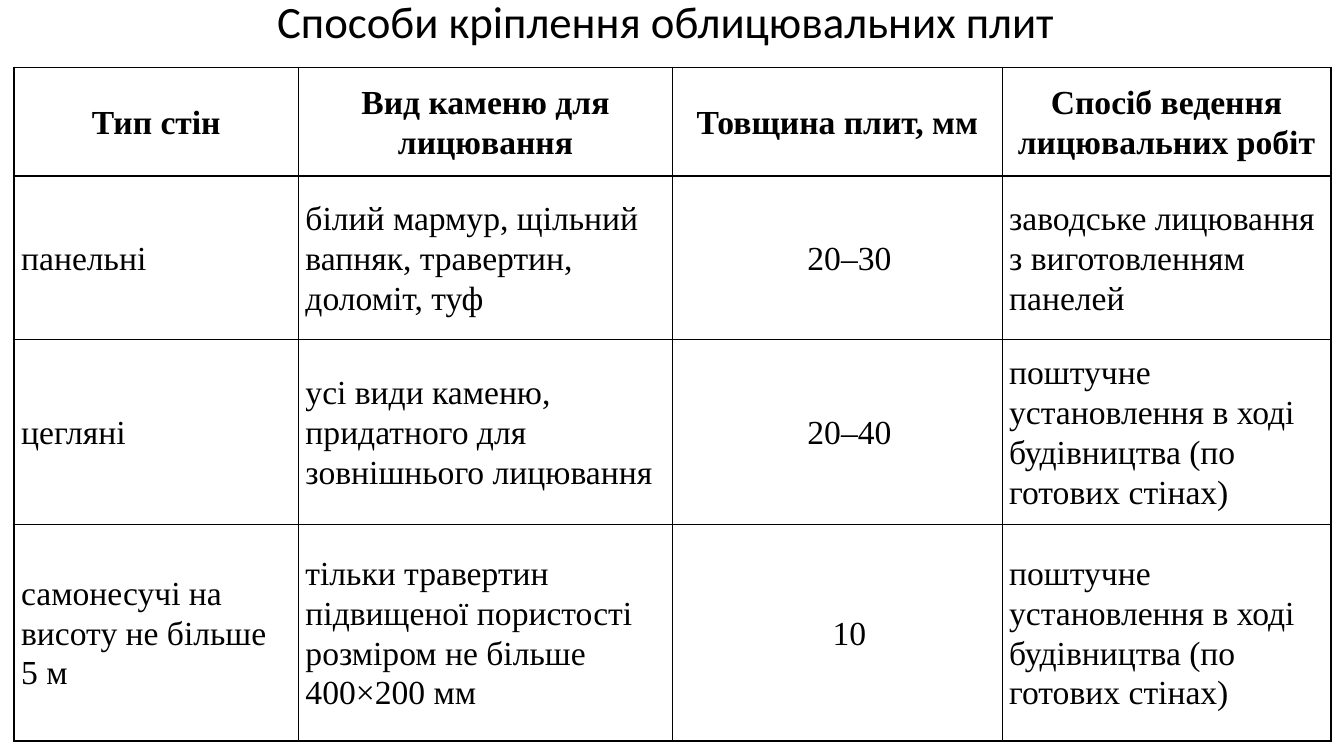
from lxml import etree
from pptx import Presentation
from pptx import util as u
from pptx.dml import color
from pptx.enum import text
from pptx.oxml import ns

PX = 9144  # EMU in one px, 100 px to the inch
BLACK = "000000"
THIN, THICK = 1, 1.5

TITLE = "Способи кріплення облицювальних плит"
COLUMN_WIDTHS = [282, 371, 327, 326]
ROW_HEIGHTS = [108, 162, 183, 215]
THICKNESS_COLUMN = 2
METHODS_IN_PLACE = "поштучне установлення в ході будівництва (по готових стінах)"
ROWS = [
    ["Тип стін", "Вид каменю для лицювання", "Товщина плит, мм",
     "Спосіб ведення лицювальних робіт"],
    ["панельні", "білий мармур, щільний вапняк, травертин, доломіт, туф",
     "20–30", "заводське лицювання з виготовленням панелей"],
    ["цегляні", "усі види каменю, придатного для зовнішнього лицювання",
     "20–40", METHODS_IN_PLACE],
    ["самонесучі на висоту не більше 5 м",
     "тільки травертин підвищеної пористості розміром не більше 400×200 мм",
     "10", METHODS_IN_PLACE],
]


def px(*lengths):
    return [u.Emu(length * PX) for length in lengths]


def rgb(value):
    return color.RGBColor.from_string(value)


def write(paragraph, words, font_name, size, spacing, centred, bold=False):
    paragraph.alignment = text.PP_ALIGN.CENTER if centred else text.PP_ALIGN.LEFT
    paragraph.line_spacing = spacing
    run = paragraph.add_run()
    run.text = words
    run.font.name = font_name
    run.font.size = u.Pt(size)
    run.font.bold = bold
    run.font.color.rgb = rgb(BLACK)


def set_borders(cell, widths):
    """Put border lines, given in points by side, ahead of the cell fill."""
    properties = cell._tc.get_or_add_tcPr()
    for position, side in enumerate("LRTB"):
        line = etree.Element(ns.qn(f"a:ln{side}"), w=str(u.Pt(widths[side])))
        fill = etree.SubElement(line, ns.qn("a:solidFill"))
        etree.SubElement(fill, ns.qn("a:srgbClr"), val=BLACK)
        properties.insert(position, line)


def border_widths(row, column):
    """Thick lines run around the table and under its header."""
    last_row, last_column = len(ROWS) - 1, len(COLUMN_WIDTHS) - 1
    thick = {"L": column == 0, "R": column == last_column,
             "T": row <= 1, "B": row in (0, last_row)}
    return {side: THICK if is_thick else THIN for side, is_thick in thick.items()}


def add_title(slide):
    frame = slide.shapes.add_textbox(*px(0, 0, 1321, 48)).text_frame
    frame.word_wrap = True
    frame.vertical_anchor = text.MSO_ANCHOR.MIDDLE
    write(frame.paragraphs[0], TITLE, "Calibri", 32, 0.9, centred=True)


def fill_cell(cell, row, column):
    header = row == 0
    thickness = column == THICKNESS_COLUMN and not header
    cell.margin_left, cell.margin_right, cell.margin_top, cell.margin_bottom = px(7, 7, 0, 0)
    cell.vertical_anchor = text.MSO_ANCHOR.MIDDLE
    cell.fill.background()
    set_borders(cell, border_widths(row, column))
    paragraph = cell.text_frame.paragraphs[0]
    write(paragraph, ROWS[row][column], "Times New Roman", 24, 1.07,
          centred=header or thickness, bold=header)
    if thickness:
        paragraph._p.get_or_add_pPr().set("indent", str(px(24)[0]))


def add_walls_table(slide):
    size = sum(COLUMN_WIDTHS), sum(ROW_HEIGHTS)
    table = slide.shapes.add_table(
        len(ROWS), len(COLUMN_WIDTHS), *px(14, 67, *size)).table
    table.first_row = table.horz_banding = False
    for column, width in zip(table.columns, px(*COLUMN_WIDTHS)):
        column.width = width
    for row, height in zip(table.rows, px(*ROW_HEIGHTS)):
        row.height = height
    for row in range(len(ROWS)):
        for column in range(len(COLUMN_WIDTHS)):
            fill_cell(table.cell(row, column), row, column)


def main():
    deck = Presentation()
    deck.slide_width, deck.slide_height = px(1333, 750)
    slide = deck.slides.add_slide(deck.slide_layouts[6])
    add_title(slide)
    add_walls_table(slide)
    deck.save("out.pptx")


if __name__ == "__main__":
    main()
